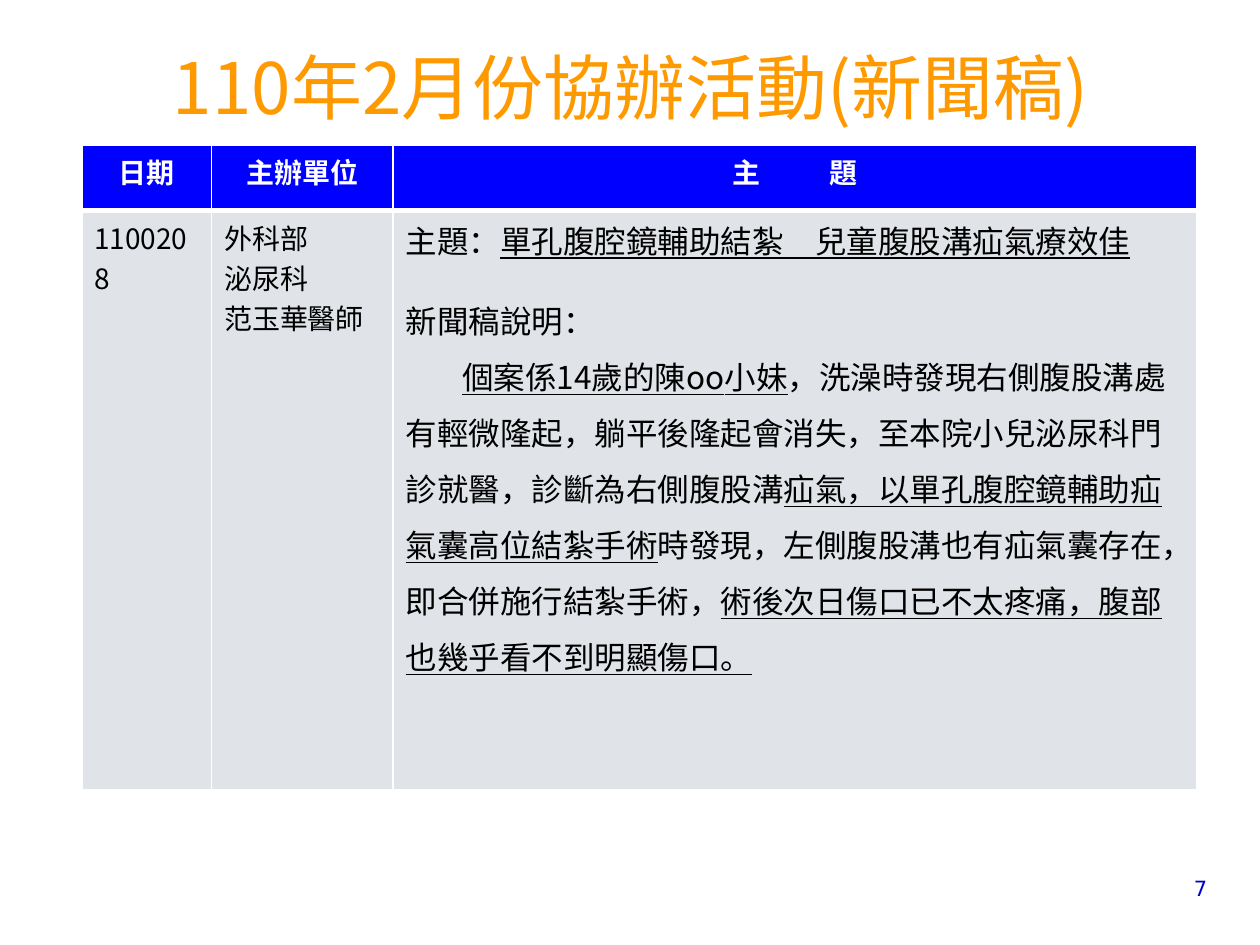
from dataclasses import dataclass
from lxml.etree import SubElement as Sub
from pptx import Presentation
from pptx.dml.color import RGBColor as Rgb
from pptx.enum.text import MSO_ANCHOR as Anchor, PP_ALIGN as Align
from pptx.oxml.ns import qn
from pptx.util import Inches, Pt


@dataclass(frozen=True)
class Theme:
    gold: str = "FF9900"
    blue: str = "0000FF"
    navy: str = "0000CC"
    gray: str = "E0E4E9"
    white: str = "FFFFFF"
    black: str = "000000"
    head: float = 40.5
    body: float = 18
    cell: float = 16
    note: float = 12
    sans: str = "Noto Sans CJK SC"
    local: str = "Noto Sans CJK TC"
    serif: str = "Times New Roman"
    plain: str = "DejaVu Sans"


def write(para, text, size, color, face, east=Theme.sans, bold=False, under=False, gap=0):
    run = para.add_run()
    run.text = text
    font = run.font
    font.size, font.name, font.bold, font.underline = Pt(size), face, bold, under
    font.color.rgb = Rgb.from_string(color)
    props = run._r.get_or_add_rPr()
    Sub(props, qn("a:ea")).set("typeface", east)
    if gap:
        props.set("spc", str(gap * 100))


class Page:
    cols, rows = 100, 75

    def __init__(self, deck, theme):
        self.deck, self.theme = deck, theme
        self.slide = deck.slides.add_slide(deck.slide_layouts[5])

    def box(self, left, top, wide, high):
        x, y = self.deck.slide_width / self.cols, self.deck.slide_height / self.rows
        return [round(n) for n in (left * x, top * y, wide * x, high * y)]

    def title(self, text, *area):
        look, shape = self.theme, self.slide.shapes.title
        shape.left, shape.top, shape.width, shape.height = self.box(*area)
        frame = shape.text_frame
        frame.vertical_anchor = Anchor.BOTTOM
        para = frame.paragraphs[0]
        para.alignment = Align.CENTER
        write(para, text, look.head, look.gold, look.sans)

    def label(self, text, *area):
        look = self.theme
        frame = self.slide.shapes.add_textbox(*self.box(*area)).text_frame
        frame.word_wrap = True
        para = frame.paragraphs[0]
        para.alignment = Align.RIGHT
        write(para, text, look.note, look.navy, look.plain)

    def table(self, left, top, wides, highs):
        area = self.box(left, top, sum(wides), sum(highs))
        grid = self.slide.shapes.add_table(len(highs), len(wides), *area).table
        for col, wide in zip(grid.columns, wides):
            col.width = self.box(0, 0, wide, 0)[2]
        for row, high in zip(grid.rows, highs):
            row.height = self.box(0, 0, 0, high)[3]
        for i, row in enumerate(grid.rows):
            for cell in row.cells:
                self.edge(cell, 1 if i else 3, 3 if i == 1 else 1)
                cell.fill.solid()
                tint = self.theme.gray if i else self.theme.blue
                cell.fill.fore_color.rgb = Rgb.from_string(tint)
        return grid

    def edge(self, cell, base, top):
        props = cell._tc.get_or_add_tcPr()
        for side, size in zip("LRTB", (1, 1, top, base)):
            line = Sub(props, qn(f"a:ln{side}"), w=str(Pt(size)))
            Sub(Sub(line, qn("a:solidFill")), qn("a:srgbClr"), val=self.theme.white)

    def fill(self, cell, paras, align=None, **base):
        frame = cell.text_frame
        for i, runs in enumerate(paras):
            para = frame.add_paragraph() if i else frame.paragraphs[0]
            para.alignment = align
            for text, form in runs:
                write(para, text, **{**base, **form})
        return frame.paragraphs


def main():
    deck = Presentation()
    deck.slide_width, deck.slide_height = Inches(10), Inches(7.5)
    look = Theme()
    page = Page(deck, look)
    page.title("110年2月份協辦活動(新聞稿)", 6.3, 3.4, 87.5, 7.3)
    grid = page.table(6.5, 11.5, (10.3, 14.4, 63.8), (5.2, 46))

    heads = (
        [("日期", {})],
        [("主辦單位", {})],
        [("主", {}), (" ", {"gap": 36}), ("題", {})],
    )
    small = {"size": look.cell, "face": look.sans}
    for i, runs in enumerate(heads):
        page.fill(grid.cell(0, i), [runs], Align.CENTER, color=look.white, bold=True, **small)

    page.fill(grid.cell(1, 0), [[("1100208", {})]], color=look.black, **small)
    names = ("外科部", "泌尿科", "范玉華醫師")
    page.fill(grid.cell(1, 1), [[(name, {})] for name in names],
              Align.JUSTIFY, color=look.black, **small)

    mark, serif = {"under": True}, {"face": look.serif}
    story = [
        [("主題：", serif), ("單孔腹腔鏡輔助結紮　兒童腹股溝疝氣療效佳", {**serif, **mark})],
        [("新聞稿說明", serif), ("：", {"face": look.local, "east": look.local})],
        [
            ("個案係14歲的陳oo小妹", mark),
            ("，洗澡時發現右側腹股溝處有輕微隆起，躺平後隆起會消失，"
             "至本院小兒泌尿科門診就醫，診斷為右側腹股溝", {}),
            ("疝氣，以單孔腹腔鏡輔助疝氣囊高位結紮手術", mark),
            ("時發現，左側腹股溝也有疝氣囊存在，即合併施行結紮手術，", {}),
            ("術後次日傷口已不太疼痛，腹部也幾乎看不到明顯傷口。", mark),
        ],
    ]
    _, intro, main_text = page.fill(grid.cell(1, 2), story, size=look.body,
                                    color=look.black, face=look.sans)
    intro.space_before = Pt(20)
    main_text.line_spacing = Pt(32)
    main_text._p.get_or_add_pPr().set("indent", str(Inches(0.45)))

    page.label("7", 89.4, 69, 7.4, 3)
    deck.save("out.pptx")


if __name__ == "__main__":
    main()
